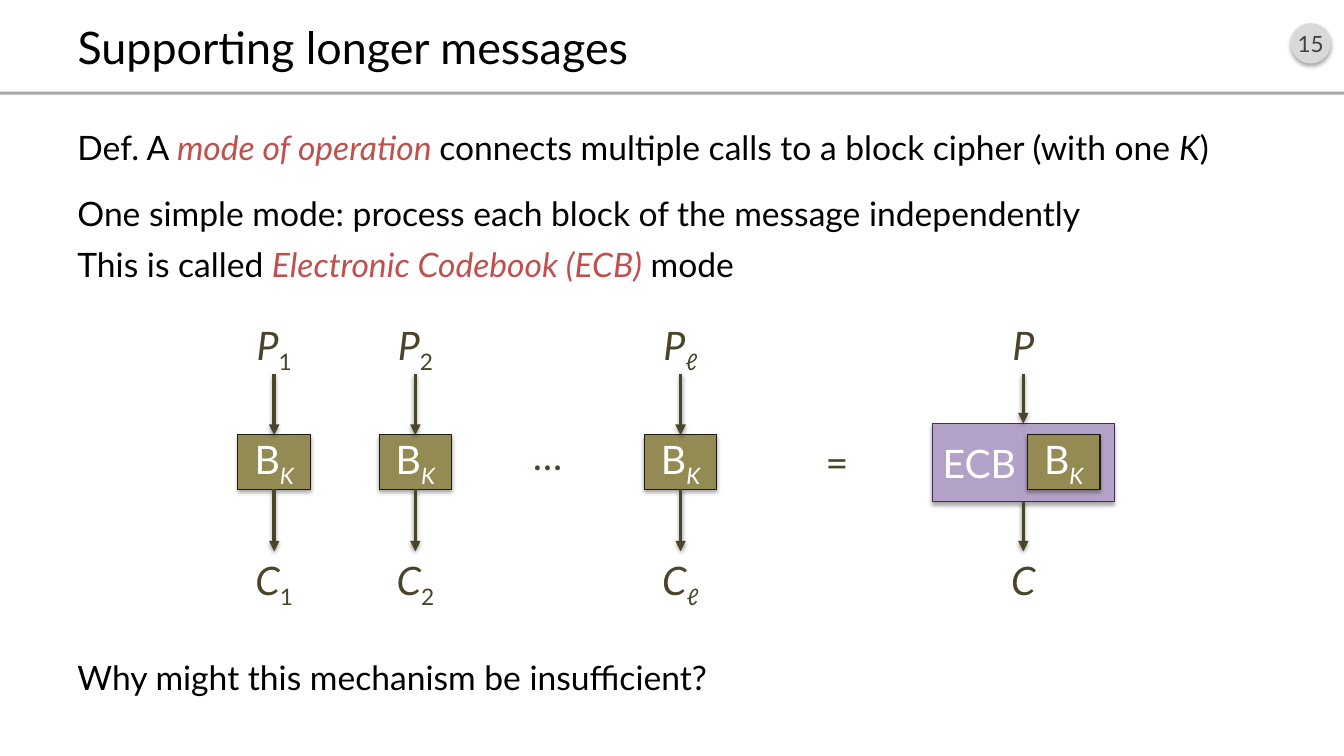
import dataclasses

import lxml.etree
import pptx
import pptx.dml.color
import pptx.enum.shapes
import pptx.enum.text
import pptx.oxml.ns
import pptx.util
from pptx.util import Inches

ALIGN = pptx.enum.text.PP_ALIGN
ANCHOR = pptx.enum.text.MSO_ANCHOR
SHAPE = pptx.enum.shapes.MSO_SHAPE
TOP, BOTTOM = 0, 2  # connection sites of a rectangle


@dataclasses.dataclass(frozen=True)
class Theme:
    font: str = "Lato"
    title_size: int = 32
    body_size: int = 24
    label_size: int = 28
    badge_size: int = 16
    black: str = "000000"
    white: str = "FFFFFF"
    accent: str = "C0504D"
    ink: str = "4A452A"
    cipher: str = "948A54"
    cipher_edge: str = "1E1C11"
    mode: str = "B3A2C7"
    mode_edge: str = "403152"
    badge: str = "D9D9D9"
    badge_text: str = "404040"
    rule: str = "A6A6A6"


THEME = Theme()
CIPHER_TEXT = [("B", ""), ("K", "italic sub")]
LABEL_W, LABEL_H = 0.88, 0.57
PLAIN_Y, CENTRE_Y, CODED_Y = 3.14, 4.585, 5.47


def rgb(colour):
    return pptx.dml.color.RGBColor.from_string(colour)


def add_child(parent, tag, **attributes):
    child = lxml.etree.SubElement(parent, pptx.oxml.ns.qn(tag))
    for name, value in attributes.items():
        child.set(name, str(value))
    return child


def write(frame, paragraphs, size=THEME.label_size, colour=THEME.ink,
          align=ALIGN.CENTER, anchor=ANCHOR.TOP, gaps=()):
    """Fill a frame; each paragraph is a list of (text, style words)."""
    frame.word_wrap = True
    frame.vertical_anchor = anchor
    for index, runs in enumerate(paragraphs):
        paragraph = frame.paragraphs[0] if index == 0 else frame.add_paragraph()
        paragraph.alignment = align
        if gaps:
            paragraph.space_before = pptx.util.Pt(gaps[index])
        for text, style in runs:
            run = paragraph.add_run()
            run.text = text
            run.font.name = THEME.font
            run.font.size = pptx.util.Pt(size)
            run.font.italic = "italic" in style
            run.font.color.rgb = rgb(THEME.accent if "accent" in style else colour)
            if "sub" in style:
                run.font._element.set("baseline", "-25000")


def add_shadow(effects, opacity, distance):
    shadow = add_child(effects, "a:outerShdw", blurRad=pptx.util.Pt(3.1),
                       dist=pptx.util.Pt(distance), dir=90 * 60000, rotWithShape=0)
    black = add_child(shadow, "a:srgbClr", val=THEME.black)
    add_child(black, "a:alpha", val=opacity * 1000)


def add_box(slide, kind, left, top, width, height, fill, edge=None, shadow=True):
    box = slide.shapes.add_shape(kind, Inches(left), Inches(top),
                                 Inches(width), Inches(height))
    box.fill.solid()
    box.fill.fore_color.rgb = rgb(fill)
    if edge:
        box.line.color.rgb = rgb(edge)
        box.line.width = pptx.util.Pt(0.75)
    else:
        box.line.fill.background()
    box.shadow.inherit = False
    if shadow:
        add_shadow(box._element.spPr.find(pptx.oxml.ns.qn("a:effectLst")), 35, 1.8)
    return box


def add_cipher(slide, centre):
    width, height = 0.72, 0.54
    cipher = add_box(slide, SHAPE.RECTANGLE, centre - width / 2, CENTRE_Y - height / 2,
                     width, height, THEME.cipher, THEME.cipher_edge)
    write(cipher.text_frame, [CIPHER_TEXT], colour=THEME.white, anchor=ANCHOR.MIDDLE)
    return cipher


def add_label(slide, centre, top, runs):
    label = slide.shapes.add_textbox(Inches(centre - LABEL_W / 2), Inches(top),
                                     Inches(LABEL_W), Inches(LABEL_H))
    write(label.text_frame, [runs])
    label.text_frame.auto_size = pptx.enum.text.MSO_AUTO_SIZE.SHAPE_TO_FIT_TEXT
    return label


def add_arrow(slide, source, target):
    arrow = slide.shapes.add_connector(pptx.enum.shapes.MSO_CONNECTOR.STRAIGHT, 0, 0, 0, 0)
    arrow.begin_connect(source, BOTTOM)
    arrow.end_connect(target, TOP)
    arrow.line.color.rgb = rgb(THEME.ink)
    arrow.line.width = pptx.util.Pt(2.5)
    add_child(arrow.line._get_or_add_ln(), "a:tailEnd", type="triangle")
    add_shadow(add_child(arrow._element.spPr, "a:effectLst"), 38, 1.6)


def add_flow(slide, centre, block, index=""):
    """Plaintext above a block, ciphertext below it, arrows between."""
    subscript = [(index, "sub")] if index else []
    plaintext = add_label(slide, centre, PLAIN_Y, [("P", "italic")] + subscript)
    ciphertext = add_label(slide, centre, CODED_Y, [("C", "italic")] + subscript)
    add_arrow(slide, plaintext, block)
    add_arrow(slide, block, ciphertext)


def add_header(slide):
    badge = add_box(slide, SHAPE.OVAL, 12.8, 0.23, 0.4, 0.4, THEME.badge)
    badge.text_frame.margin_left = badge.text_frame.margin_right = 0
    write(badge.text_frame, [[("15", "")]], size=THEME.badge_size,
          colour=THEME.badge_text, anchor=ANCHOR.MIDDLE)
    add_box(slide, SHAPE.RECTANGLE, 0, 0.91, 13.33, 0.03, THEME.rule, shadow=False)

    title = slide.shapes.title
    title.left, title.top = Inches(0.67), Inches(0.16)
    title.width, title.height = Inches(12), Inches(0.6)
    write(title.text_frame, [[("Supporting longer messages", "")]], size=THEME.title_size,
          colour=THEME.black, align=ALIGN.LEFT, anchor=ANCHOR.MIDDLE)


def add_body(slide):
    body = slide.shapes.add_textbox(Inches(0.67), Inches(1.21), Inches(12), Inches(5.75))
    write(body.text_frame, [
        [("Def. A ", ""), ("mode of operation ", "italic accent"),
         ("connects multiple calls to a block cipher (with one ", ""),
         ("K", "italic"), (")", "")],
        [("One simple mode: process each block of the message independently", "")],
        [("This is called ", ""), ("Electronic Codebook (ECB)", "italic accent"),
         (" mode", "")],
        [("Why might this mechanism be insufficient?", "")],
    ], size=THEME.body_size, colour=THEME.black, align=ALIGN.LEFT, gaps=(8, 18, 8, 266))


def main():
    deck = pptx.Presentation()
    deck.slide_width, deck.slide_height = Inches(13.33), Inches(7.5)
    slide = deck.slides.add_slide(deck.slide_layouts[5])
    add_header(slide)
    add_body(slide)

    # One cipher call per message block
    for centre, index in ((2.72, "1"), (4.12, "2"), (6.75, "ℓ")):
        add_flow(slide, centre, add_cipher(slide, centre), index)
    add_label(slide, 5.43, 4.23, [("…", "")])
    add_label(slide, 8.3, 4.3, [("=", "")])

    # The same thing as a single ECB box
    ecb = add_box(slide, SHAPE.RECTANGLE, 9.25, 4.2, 1.8, 0.78, THEME.mode, THEME.mode_edge)
    write(ecb.text_frame, [[("ECB", "")]], colour=THEME.white,
          align=ALIGN.LEFT, anchor=ANCHOR.MIDDLE)
    add_flow(slide, 10.15, ecb)
    add_cipher(slide, 10.55)

    deck.save("out.pptx")


if __name__ == "__main__":
    main()
